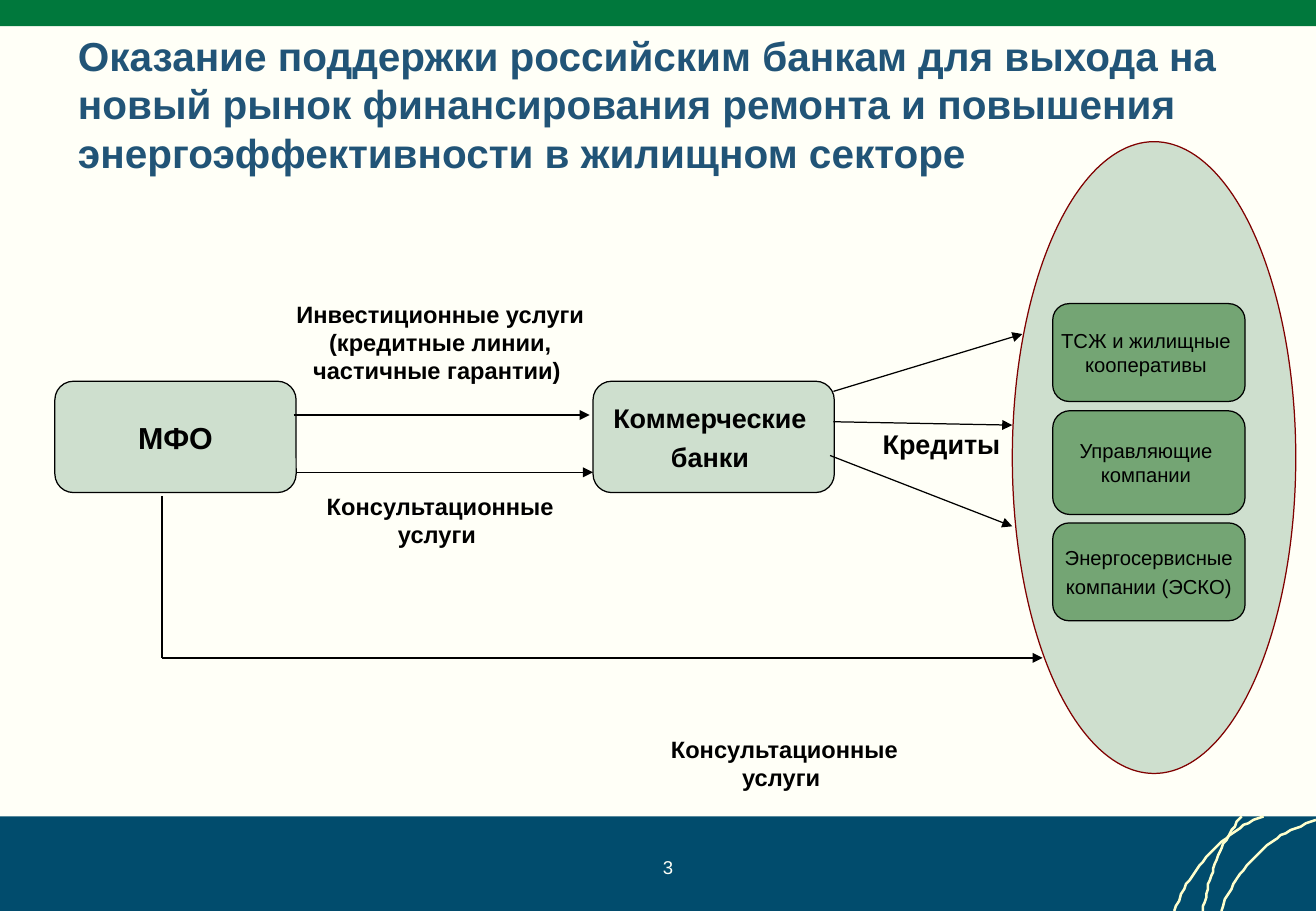
"""Build the slide on bank support for housing renovation and energy efficiency finance."""
from lxml import etree
from pptx import Presentation
from pptx.dml.color import RGBColor
from pptx.enum.shapes import MSO_CONNECTOR, MSO_SHAPE
from pptx.enum.text import MSO_ANCHOR, PP_ALIGN
from pptx.oxml.ns import qn
from pptx.util import Pt

CREAM = RGBColor(0xFF, 0xFF, 0xF7)
NAVY = RGBColor(0x01, 0x4C, 0x6D)
GREEN = RGBColor(0x00, 0x78, 0x3C)
PALE_YELLOW = RGBColor(0xFF, 0xFF, 0xCC)
PALE_GREEN = RGBColor(0xCE, 0xDF, 0xCE)
MID_GREEN = RGBColor(0x74, 0xA5, 0x74)
TITLE_BLUE = RGBColor(0x21, 0x54, 0x77)
MAROON = RGBColor(0x80, 0x00, 0x00)
BLACK = RGBColor(0x00, 0x00, 0x00)
RECTANGLE, ROUNDED, OVAL = MSO_SHAPE.RECTANGLE, MSO_SHAPE.ROUNDED_RECTANGLE, MSO_SHAPE.OVAL
STRAIGHT = MSO_CONNECTOR.STRAIGHT
TOP, MIDDLE = MSO_ANCHOR.TOP, MSO_ANCHOR.MIDDLE
LEFT, CENTER = PP_ALIGN.LEFT, PP_ALIGN.CENTER


def write_text(shape, lines, size, bold=True, color=BLACK, align=CENTER, gap=0, **frame_format):
    frame = shape.text_frame
    for name, value in frame_format.items():
        setattr(frame, name, value)
    for index, line in enumerate(lines):
        para = frame.paragraphs[0] if index == 0 else frame.add_paragraph()
        para.alignment = align
        para.space_before = Pt(gap if index else 0)
        span = para.add_run()
        span.text = line
        font_format = {"name": "Arial", "size": Pt(size), "bold": bold}
        for name, value in font_format.items():
            setattr(span.font, name, value)
        span.font.color.rgb = color


def add_filled(kind, place, fill, outline=None):
    shape = slide.shapes.add_shape(kind, *map(Pt, place))
    shape.shadow.inherit = False
    shape.fill.solid()
    shape.fill.fore_color.rgb = fill
    if outline is None:
        shape.line.fill.background()
    else:
        shape.line.color.rgb = outline
        shape.line.width = Pt(0.75)
    return shape


deck = Presentation()
deck.slide_width, deck.slide_height = Pt(780), Pt(540)
slide = deck.slides.add_slide(deck.slide_layouts[5])
slide.background.fill.solid()
slide.background.fill.fore_color.rgb = CREAM

add_filled(RECTANGLE, (0, 484, 780, 56), NAVY)
add_filled(RECTANGLE, (0, 0, 780, 15.5), GREEN)

footer_arcs = [
    [(749, 483.5), (725, 493), (706, 514), (696, 540)],
    [(780, 486.5), (755, 493), (734, 513), (723.5, 540)],
    [(736, 483.5), (724, 499), (716.5, 519), (713, 540)],
]
STEPS = 24
for start, pull_start, pull_end, end in footer_arcs:
    points = []
    for step in range(STEPS + 1):
        t = step / STEPS
        weights = ((1 - t) ** 3, 3 * t * (1 - t) ** 2, 3 * t * t * (1 - t), t ** 3)
        points.append(tuple(
            sum(weight * value for weight, value in zip(weights, values))
            for values in zip(start, pull_start, pull_end, end)
        ))
    builder = slide.shapes.build_freeform(*points[0], scale=Pt(1))
    builder.add_line_segments(points[1:], close=False)
    arc = builder.convert_to_shape()
    arc.shadow.inherit = False
    arc.fill.background()
    arc.line.color.rgb = PALE_YELLOW
    arc.line.width = Pt(1.5)

title = slide.shapes.title
title.left, title.top, title.width, title.height = Pt(39), Pt(30), Pt(702), Pt(63)
write_text(
    title,
    ["Оказание поддержки российским банкам для выхода на новый рынок финансирования "
     "ремонта и повышения энергоэффективности в жилищном секторе"],
    24, color=TITLE_BLUE, align=LEFT, vertical_anchor=MIDDLE, word_wrap=True,
)

participants = [
    (32.5, ["МФО"], 18),
    (351.5, ["Коммерческие ", "банки "], 16),
]
for left, lines, size in participants:
    box = add_filled(ROUNDED, (left, 226, 143, 66), PALE_GREEN, BLACK)
    write_text(box, lines, size, gap=4, vertical_anchor=MIDDLE, word_wrap=False)

flows = [
    ((494, 232), (606, 198), True),
    ((494, 250), (600, 252), True),
    ((492, 270), (600, 312), True),
    ((174, 246), (349.5, 246), True),
    ((175.5, 280), (351.5, 280), True),
    ((96, 294), (96, 390), False),
    ((96, 390), (618, 390), True),
]
for start, end, has_arrow in flows:
    flow = slide.shapes.add_connector(STRAIGHT, *map(Pt, start + end))
    flow.line.color.rgb = BLACK
    flow.line.width = Pt(0.75)
    if has_arrow:
        etree.SubElement(flow.line._get_or_add_ln(), qn("a:tailEnd"), type="triangle")
    etree.SubElement(flow._element.spPr, qn("a:effectLst"))

labels = [
    ((168, 174, 186, 58), "Инвестиционные услуги (кредитные линии, частичные гарантии) ", 14, True, BLACK),
    ((186, 288, 150, 41), "Консультационные услуги ", 14, True, BLACK),
    ((390, 432, 150, 41), "Консультационные услуги ", 14, True, BLACK),
    ((513, 250, 90, 26), "Кредиты", 16, True, BLACK),
    ((312, 504, 168, 21), "3", 11, False, CREAM),
]
for place, wording, size, bold, color in labels:
    label = slide.shapes.add_textbox(*map(Pt, place))
    write_text(label, [wording], size, bold, color, word_wrap=True, vertical_anchor=TOP,
               margin_left=Pt(4), margin_right=Pt(4))

add_filled(OVAL, (600, 84, 168, 374.5), PALE_GREEN, MAROON)
borrowers = [
    (180, 58, ["ТСЖ и жилищные ", "кооперативы "], 0),
    (243.5, 61.5, ["Управляющие ", "компании "], 0),
    (310, 58, ["Энергосервисные", "компании (ЭСКО)"], 2.8),
]
for top, height, lines, gap in borrowers:
    box = add_filled(ROUNDED, (624, top, 114, height), MID_GREEN, BLACK)
    write_text(box, lines, 12, bold=False, gap=gap, vertical_anchor=MIDDLE, word_wrap=False)

deck.save("out.pptx")
